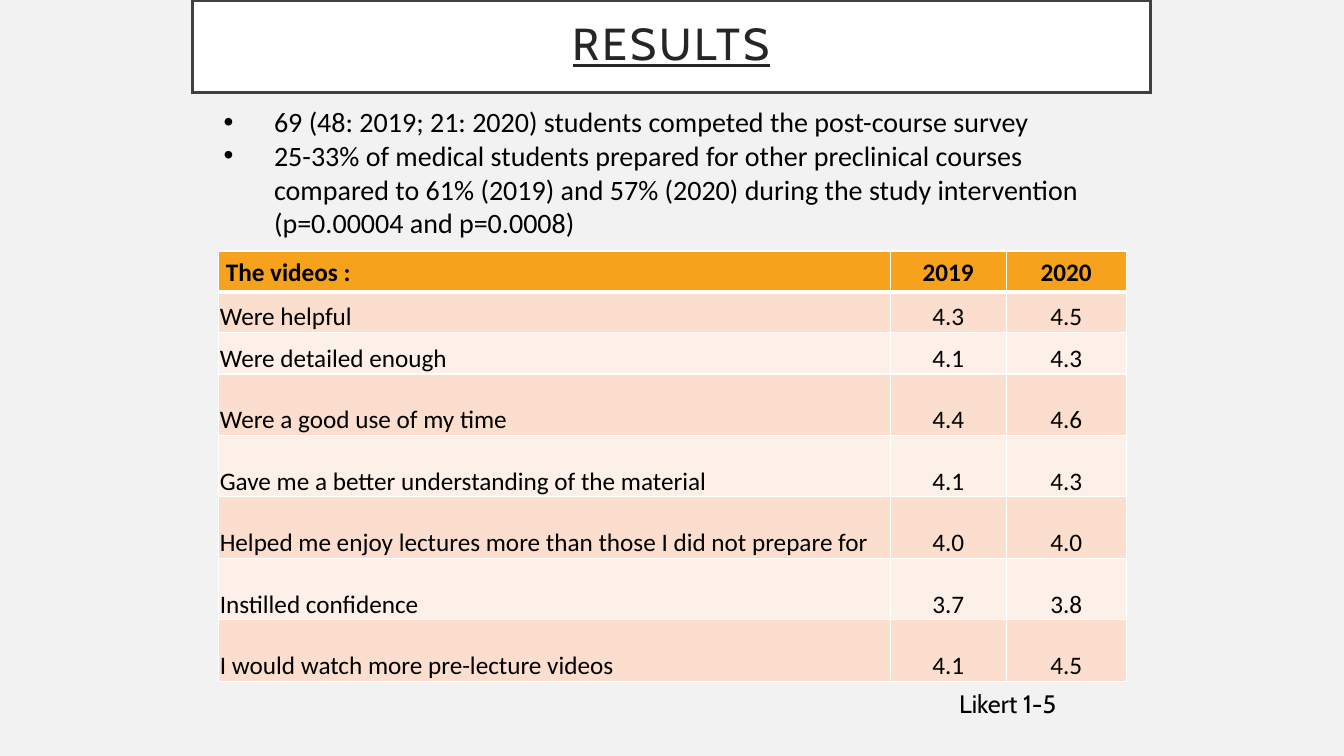
from pptx import Presentation
from pptx.dml.color import RGBColor
from pptx.enum.shapes import MSO_SHAPE
from pptx.enum.text import MSO_ANCHOR, PP_ALIGN
from pptx.oxml.ns import qn
from pptx.util import Inches, Pt
from lxml.etree import SubElement

RATINGS = [
    ("The videos :", "2019", "2020"),
    ("Were helpful", "4.3", "4.5"),
    ("Were detailed enough", "4.1", "4.3"),
    ("Were a good use of my time", "4.4", "4.6"),
    ("Gave me a better understanding of the material", "4.1", "4.3"),
    ("Helped me enjoy lectures more than those I did not prepare for", "4.0", "4.0"),
    ("Instilled confidence", "3.7", "3.8"),
    ("I would watch more pre-lecture videos", "4.1", "4.5"),
]
WIDTHS = [6.66, 1.15, 1.19]
HEIGHTS = [0.41, 0.4, 0.41] + [0.61] * 5
BANDS = ["FDF0E8", "FBDECD"]
FINDINGS = [
    "69 (48: 2019; 21: 2020) students competed the post-course survey",
    "25-33% of medical students prepared for other preclinical courses "
    "compared to 61% (2019) and 57% (2020) during the study intervention "
    "(p=0.00004 and p=0.0008)",
]


def paint(fill, color):
    fill.solid()
    fill.fore_color.rgb = RGBColor.from_string(color)


def add_run(para, text, size, font="Calibri", color="000000", bold=False):
    run = para.add_run()
    run.text = text
    run.font.size = Pt(size)
    run.font.name = font
    run.font.bold = bold
    paint(run.font.fill, color)
    return run


def add_title(slide, text):
    box = slide.shapes.add_shape(
        MSO_SHAPE.RECTANGLE, Inches(1.91), 0, Inches(9.5), Inches(0.92))
    box.shadow.inherit = False
    paint(box.fill, "FFFFFF")
    paint(box.line.fill, "404040")
    box.line.width = Pt(2.5)
    SubElement(box.line._get_or_add_ln(), qn("a:miter"), lim="800000")
    frame = box.text_frame
    frame.vertical_anchor = MSO_ANCHOR.MIDDLE
    para = frame.paragraphs[0]
    para.alignment = PP_ALIGN.CENTER
    para.line_spacing = 0.9
    run = add_run(para, text, 32, "Cabin", "262626")
    run.font.underline = True
    run.font._element.set("spc", "200")


def add_text(slide, left, top, width, height):
    box = slide.shapes.add_textbox(
        Inches(left), Inches(top), Inches(width), Inches(height))
    box.text_frame.word_wrap = True
    return box.text_frame


def add_list(slide, items):
    frame = add_text(slide, 2.12, 0.99, 9.04, 1.45)
    for i, item in enumerate(items):
        para = frame.add_paragraph() if i else frame.paragraphs[0]
        props = para._p.get_or_add_pPr()
        props.set("marL", str(Inches(0.5)))
        props.set("indent", str(-Inches(0.5)))
        SubElement(props, qn("a:buFont"), typeface="Arial")
        SubElement(props, qn("a:buChar"), char="•")
        add_run(para, item, 20)


def add_edge(props, side, width):
    line = SubElement(props, qn("a:" + side), w=str(Pt(width)))
    fill = SubElement(line, qn("a:solidFill"))
    SubElement(fill, qn("a:srgbClr"), val="FFFFFF")


def fill_cell(cell, text, row, col):
    head = row == 0
    side = 0.07 if head else 0.01
    cell.margin_left = cell.margin_right = Inches(side)
    cell.margin_top = Inches(0 if head else 0.01)
    cell.margin_bottom = 0
    cell.vertical_anchor = MSO_ANCHOR.MIDDLE if head else MSO_ANCHOR.BOTTOM
    props = cell._tc.get_or_add_tcPr()
    for edge in ("lnL", "lnR", "lnT", "lnB"):
        thick = edge == "lnB" and head or edge == "lnT" and row == 1
        add_edge(props, edge, 3 if thick else 1)
    paint(cell.fill, "F6A21D" if head else BANDS[row % 2])
    para = cell.text_frame.paragraphs[0]
    para.alignment = PP_ALIGN.CENTER if col else PP_ALIGN.LEFT
    if head:
        para.line_spacing = 1.07
    add_run(para, text, 18, bold=head)


def add_grid(slide, rows):
    table = slide.shapes.add_table(
        len(rows), len(WIDTHS), Inches(2.17), Inches(2.49),
        Inches(sum(WIDTHS)), Inches(sum(HEIGHTS))).table
    for col, width in zip(table.columns, WIDTHS):
        col.width = Inches(width)
    for row, height in zip(table.rows, HEIGHTS):
        row.height = Inches(height)
    for r, texts in enumerate(rows):
        for c, text in enumerate(texts):
            fill_cell(table.cell(r, c), text, r, c)


def add_note(slide, text):
    para = add_text(slide, 8.83, 6.78, 2.33, 0.4).paragraphs[0]
    para.alignment = PP_ALIGN.CENTER
    add_run(para, text, 18, "Cabin")


def main():
    deck = Presentation()
    deck.slide_width = Inches(13.33)
    deck.slide_height = Inches(7.5)
    slide = deck.slides.add_slide(deck.slide_layouts[6])
    paint(slide.background.fill, "F2F2F2")
    add_title(slide, "RESULTS")
    add_list(slide, FINDINGS)
    add_grid(slide, RATINGS)
    add_note(slide, "Likert 1-5")
    deck.save("out.pptx")


if __name__ == "__main__":
    main()
